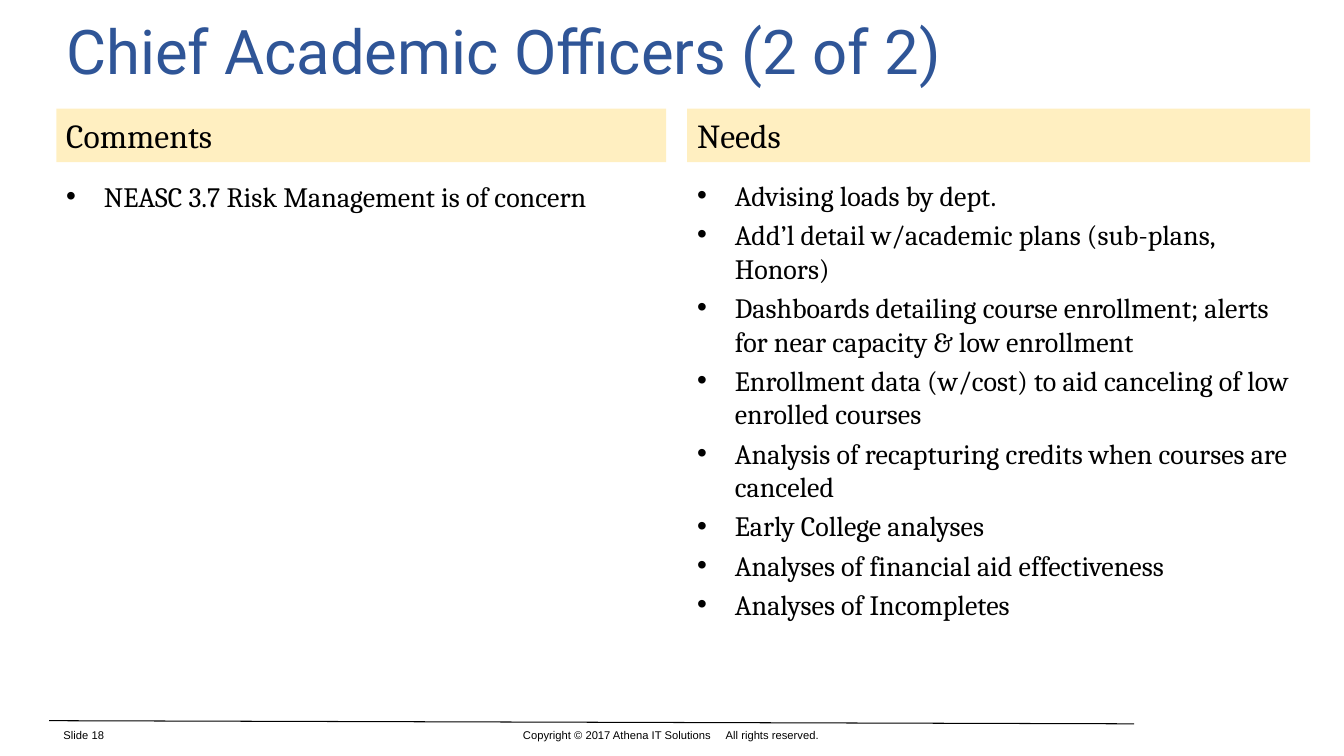
from lxml import etree
from pptx import Presentation
from pptx import util as u
from pptx.dml.color import RGBColor
from pptx.enum import shapes, text
from pptx.oxml import ns

TITLE = "Chief Academic Officers (2 of 2)"
COLUMNS = [
    {
        "heading": "Comments", "left": 1.42, "width": 15.37, "list_top": 4.39,
        "points": ["NEASC 3.7 Risk Management is of concern"],
    },
    {
        "heading": "Needs", "left": 17.32, "width": 15.7, "list_top": 4.37,
        "points": [
            "Advising loads by dept.",
            "Add’l detail w/academic plans (sub-plans, Honors)",
            "Dashboards detailing course enrollment; alerts for near capacity & low enrollment",
            "Enrollment data (w/cost) to aid canceling of low enrolled courses",
            "Analysis of recapturing credits when courses are canceled",
            "Early College analyses",
            "Analyses of financial aid effectiveness",
            "Analyses of Incompletes",
        ],
    },
]
SLIDE_LABEL = "Slide 18"
COPYRIGHT = "Copyright © 2017 Athena IT Solutions\tAll rights reserved."

BLACK = RGBColor(0x00, 0x00, 0x00)
BLUE = RGBColor(0x2F, 0x55, 0x97)
GOLD = RGBColor(0xFF, 0xD9, 0x66)

HEADING_TOP, HEADING_HEIGHT = 2.74, 1.35
LIST_HEIGHT = 13.39
FOOTER_TOP, FOOTER_HEIGHT = 18.24, 0.56
BULLET_INDENT = u.Cm(0.95)
TAB_STOP = u.Cm(5.11)

deck = Presentation()
deck.slide_width, deck.slide_height = u.Cm(33.87), u.Cm(19.05)
slide = deck.slides.add_slide(deck.slide_layouts[6])


def add_child(parent, tag, **attributes):
    return etree.SubElement(parent, ns.qn(tag), attributes)


def write(lines, left, top, width, height, size=20, font="Cambria", color=BLACK,
          anchor=text.MSO_ANCHOR.MIDDLE, band=None, bullet=None, tab=None, inset=0.25):
    box = (u.Cm(left), u.Cm(top), u.Cm(width), u.Cm(height))
    if band is None:
        holder = slide.shapes.add_textbox(*box)
    else:
        holder = slide.shapes.add_shape(shapes.MSO_SHAPE.RECTANGLE, *box)
        holder.shadow.inherit = False
        holder.fill.solid()
        holder.fill.fore_color.rgb = band
        tint = holder.fill._xPr.find(".//" + ns.qn("a:srgbClr"))
        add_child(tint, "a:alpha", val="40000")
        holder.line.fill.background()
    frame = holder.text_frame
    frame.word_wrap = True
    frame.vertical_anchor = anchor
    frame.margin_left = frame.margin_right = u.Cm(inset)
    for index, line in enumerate(lines):
        paragraph = frame.add_paragraph() if index else frame.paragraphs[0]
        paragraph.text = line
        paragraph.alignment = text.PP_ALIGN.LEFT
        if index:
            paragraph.space_before = u.Pt(4)
        properties = paragraph._p.get_or_add_pPr()
        if bullet:
            properties.set("marL", str(BULLET_INDENT))
            properties.set("indent", str(-BULLET_INDENT))
            add_child(properties, "a:buFont", typeface="Arial")
            add_child(properties, "a:buChar", char=bullet)
        if tab:
            stops = add_child(properties, "a:tabLst")
            add_child(stops, "a:tab", pos=str(tab), algn="l")
        paragraph.font.size = u.Pt(size)
        paragraph.font.name = font
        paragraph.font.color.rgb = color
        for run in paragraph.runs:
            run.font.size = u.Pt(size)
            run.font.name = font
            run.font.color.rgb = color


footer_rule = slide.shapes.add_connector(
    shapes.MSO_CONNECTOR.STRAIGHT, u.Cm(1.24), u.Cm(18.16), u.Cm(28.58), u.Cm(18.24))
footer_rule.line.color.rgb = BLACK
footer_rule.line.width = u.Pt(0.75)
add_child(footer_rule._element.spPr, "a:effectLst")

write([TITLE], 1.42, 0.28, 31.6, 1.93, size=44, font="Roboto", color=BLUE)

for column in COLUMNS:
    left, width = column["left"], column["width"]
    write([column["heading"]], left, HEADING_TOP, width, HEADING_HEIGHT, size=24, band=GOLD)
    write(column["points"], left, column["list_top"], width, LIST_HEIGHT,
          anchor=text.MSO_ANCHOR.TOP, bullet="•")

write([COPYRIGHT], 13.18, FOOTER_TOP, 8, FOOTER_HEIGHT, size=8, font="Arial",
      tab=TAB_STOP, inset=0)
write([SLIDE_LABEL], 1.35, FOOTER_TOP, 4.34, FOOTER_HEIGHT, size=8, font="Arial")

deck.save("out.pptx")
